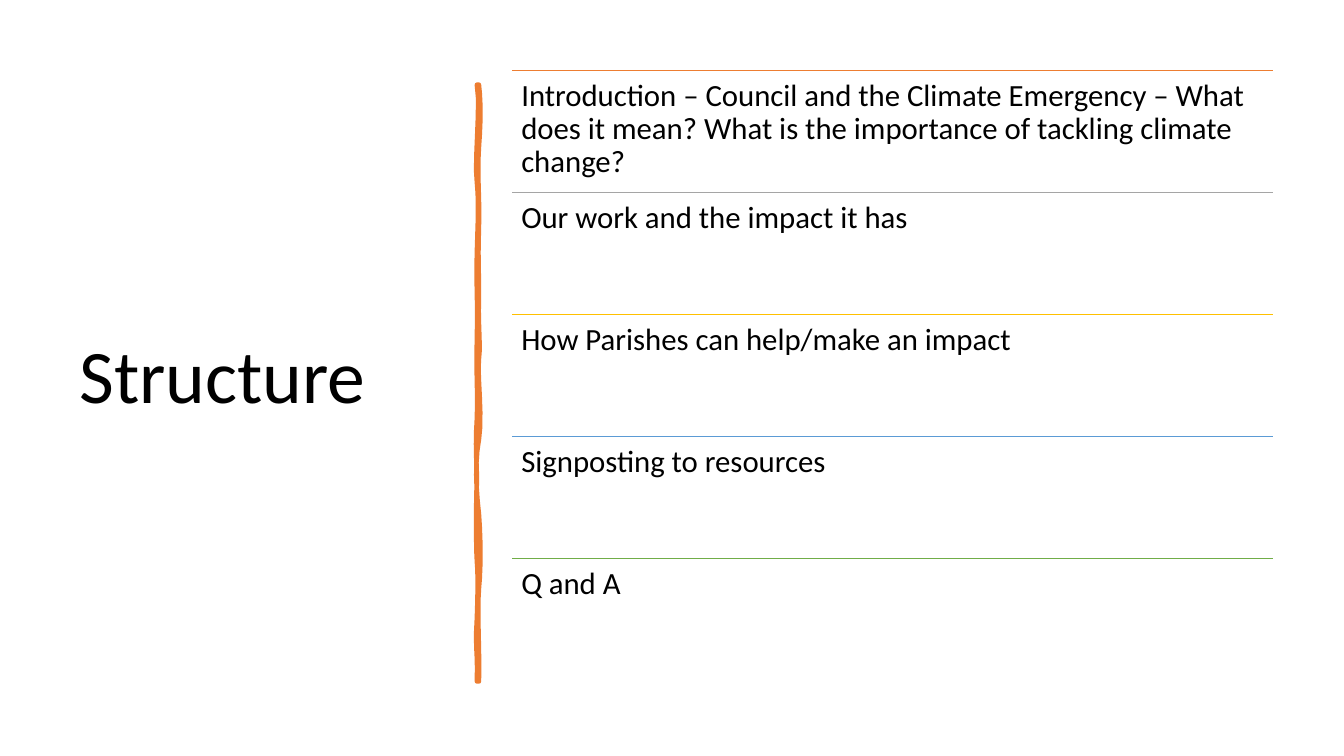
from dataclasses import dataclass

from lxml.etree import SubElement
from pptx import Presentation
from pptx.dml.color import RGBColor
from pptx.enum.shapes import MSO_CONNECTOR
from pptx.enum.text import MSO_ANCHOR, MSO_AUTO_SIZE, PP_ALIGN
from pptx.oxml.ns import qn
from pptx.slide import Slide
from pptx.text.text import TextFrame
from pptx.util import Inches, Pt

Point = tuple[float, float]


@dataclass(frozen=True)
class Theme:
    font: str = "Calibri"
    text: str = "000000"
    accent: str = "ED7D31"
    title_size: float = 54
    item_size: float = 22
    rule_width: float = 1
    bar_width: float = 3.25


@dataclass(frozen=True)
class AgendaItem:
    text: str
    color: str


@dataclass(frozen=True)
class Curve:
    c1: Point
    c2: Point
    end: Point

    def points(self, start: Point, steps: int = 6) -> list[Point]:
        result = []
        for i in range(1, steps + 1):
            t = i / steps
            weights = ((1 - t) ** 3, 3 * t * (1 - t) ** 2, 3 * t * t * (1 - t), t ** 3)
            knots = (start, self.c1, self.c2, self.end)
            result.append((sum(w * k[0] for w, k in zip(weights, knots)),
                           sum(w * k[1] for w, k in zip(weights, knots))))
        return result


THEME = Theme()
LIST_LEFT, LIST_TOP, LIST_WIDTH, ROW_HEIGHT = 5.08, 0.7, 7.55, 1.21
ITEMS = [
    AgendaItem("Introduction – Council and the Climate Emergency – What does it mean? "
               "What is the importance of tackling climate change?", THEME.accent),
    AgendaItem("Our work and the impact it has", "A5A5A5"),
    AgendaItem("How Parishes can help/make an impact", "FFC000"),
    AgendaItem("Signposting to resources", "5B9BD5"),
    AgendaItem("Q and A", "70AD47"),
]
BAR_START = (4.75, 0.84)
BAR_CURVES = [
    Curve((4.77, 1.02), (4.77, 1.19), (4.75, 1.46)),
    Curve((4.73, 1.73), (4.76, 1.95), (4.75, 2.26)),
    Curve((4.74, 2.57), (4.75, 2.62), (4.75, 2.94)),
    Curve((4.74, 3.25), (4.77, 3.42), (4.75, 3.56)),
    Curve((4.73, 3.7), (4.79, 4.14), (4.75, 4.36)),
    Curve((4.71, 4.57), (4.72, 4.84), (4.75, 5.1)),
    Curve((4.77, 5.36), (4.77, 5.64), (4.75, 5.84)),
    Curve((4.73, 6.03), (4.76, 6.5), (4.75, 6.76)),
    Curve((4.74, 6.76), (4.73, 6.76), (4.73, 6.76)),
    Curve((4.74, 6.46), (4.71, 6.44), (4.73, 6.13)),
    Curve((4.74, 5.83), (4.74, 5.7), (4.73, 5.57)),
    Curve((4.72, 5.44), (4.72, 4.95), (4.73, 4.77)),
    Curve((4.73, 4.59), (4.71, 4.45), (4.73, 4.15)),
    Curve((4.74, 3.86), (4.72, 3.73), (4.73, 3.35)),
    Curve((4.74, 2.98), (4.72, 2.81), (4.73, 2.5)),
    Curve((4.74, 2.18), (4.75, 2), (4.73, 1.81)),
    Curve((4.7, 1.63), (4.77, 1.04), (4.73, 0.84)),
]


def set_text(tf: TextFrame, text: str, size: float) -> None:
    tf.text = text
    tf.word_wrap = True
    tf.auto_size = MSO_AUTO_SIZE.NONE
    p = tf.paragraphs[0]
    p.alignment = PP_ALIGN.LEFT
    p.line_spacing = 0.9
    font = p.runs[0].font
    font.name = THEME.font
    font.size = Pt(size)
    font.color.rgb = RGBColor.from_string(THEME.text)


def add_title(s: Slide, text: str) -> None:
    sp = s.shapes.title
    sp.left, sp.top, sp.width, sp.height = map(Inches, (0.69, 0.7, 3.74, 6.11))
    set_text(sp.text_frame, text, THEME.title_size)
    sp.text_frame.vertical_anchor = MSO_ANCHOR.MIDDLE


def add_bar(s: Slide) -> None:
    points = [BAR_START]
    for curve in BAR_CURVES:
        points += curve.points(points[-1])
    start, *rest = [(Inches(x), Inches(y)) for x, y in points]
    builder = s.shapes.build_freeform(*start)
    builder.add_line_segments(rest, close=True)
    sp = builder.convert_to_shape()
    sp.shadow.inherit = False
    color = RGBColor.from_string(THEME.accent)
    sp.fill.solid()
    sp.fill.fore_color.rgb = color
    sp.line.color.rgb = color
    sp.line.width = Pt(THEME.bar_width)
    SubElement(sp.line._get_or_add_ln(), qn("a:round"))


def add_item(s: Slide, item: AgendaItem, top: float) -> None:
    left, y, width = Inches(LIST_LEFT), Inches(top), Inches(LIST_WIDTH)
    rule = s.shapes.add_connector(MSO_CONNECTOR.STRAIGHT, left, y, left + width, y)
    rule.line.color.rgb = RGBColor.from_string(item.color)
    rule.line.width = Pt(THEME.rule_width)
    SubElement(rule._element.spPr, qn("a:effectLst"))
    tf = s.shapes.add_textbox(left, y, width, Inches(ROW_HEIGHT)).text_frame
    tf.margin_left = tf.margin_right = tf.margin_top = tf.margin_bottom = Inches(0.09)
    set_text(tf, item.text, THEME.item_size)


def main() -> None:
    prs = Presentation()
    prs.slide_width, prs.slide_height = Inches(13.33), Inches(7.5)
    s = prs.slides.add_slide(prs.slide_layouts[5])
    add_title(s, "Structure")
    add_bar(s)
    for i, item in enumerate(ITEMS):
        add_item(s, item, LIST_TOP + i * ROW_HEIGHT)
    prs.save("out.pptx")


if __name__ == "__main__":
    main()
